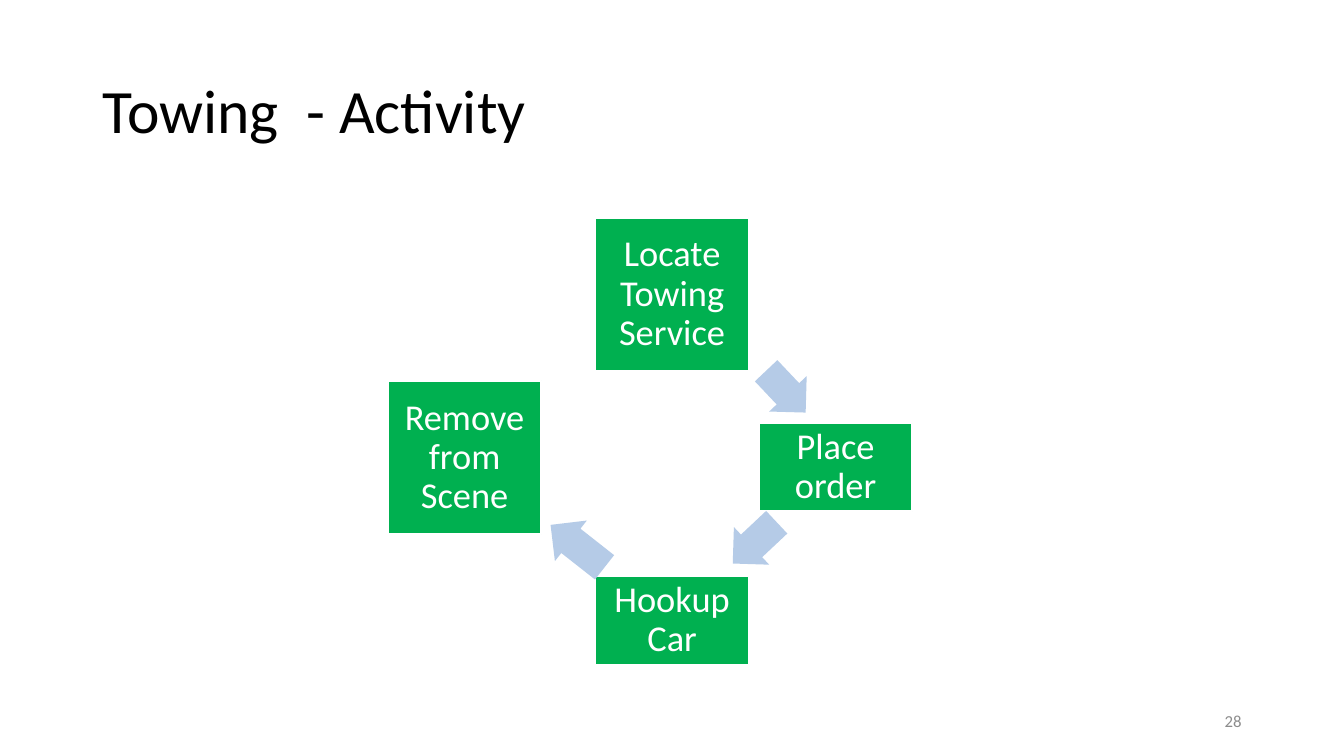
import pptx
import pptx.dml.color
import pptx.enum.shapes
import pptx.enum.text
import pptx.util

Cm = pptx.util.Cm
ALIGN = pptx.enum.text.PP_ALIGN
SHAPE = pptx.enum.shapes.MSO_SHAPE

COLOURS = {
    "title": "000000",
    "step": "00B050",
    "white": "FFFFFF",
    "arrow": "B5CBE7",
    "number": "8C8C8C",
}

STEP_WIDTH = 3.86
STEPS = [
    ("Locate Towing Service", 5.23, 0, 3.86),
    ("Place order", 9.35, 5.18, 2.21),
    ("Hookup Car", 5.23, 9.04, 2.21),
    ("Remove from Scene", 0, 4.11, 3.86),
]
ARROW_HEIGHT = 1.3
ARROWS = [
    (9.3, 3.73, 1.45, 46.6),
    (8.48, 7.54, 1.52, 136.8),
    (3.91, 7.62, 1.73, 218.2),
]


def colour(name):
    """Return the named colour."""
    return pptx.dml.color.RGBColor.from_string(COLOURS[name])


def write_text(shape, text, size, ink, align=ALIGN.LEFT, line_spacing=None, inset=None):
    """Put one formatted paragraph into a shape, centred vertically."""
    frame = shape.text_frame
    frame.word_wrap = True
    frame.auto_size = pptx.enum.text.MSO_AUTO_SIZE.NONE
    frame.vertical_anchor = pptx.enum.text.MSO_ANCHOR.MIDDLE
    if inset is not None:
        frame.margin_left = frame.margin_right = Cm(inset)
        frame.margin_top = frame.margin_bottom = Cm(inset)
    paragraph = frame.paragraphs[0]
    paragraph.alignment = align
    paragraph.line_spacing = line_spacing
    run = paragraph.add_run()
    run.text = text
    run.font.name = "Calibri"
    run.font.size = pptx.util.Pt(size)
    run.font.color.rgb = colour(ink)


def add_filled_shape(slide, kind, left, top, width, height, fill):
    """Add a flat preset shape without an outline."""
    shape = slide.shapes.add_shape(kind, Cm(left), Cm(top), Cm(width), Cm(height))
    shape.shadow.inherit = False
    shape.fill.solid()
    shape.fill.fore_color.rgb = colour(fill)
    shape.line.fill.background()
    return shape


def place_title(slide, left, top, width, height):
    """Move and fill the title placeholder."""
    title = slide.shapes.title
    title.left, title.top, title.width, title.height = map(Cm, (left, top, width, height))
    write_text(title, "Towing  - Activity", 44, "title", line_spacing=0.9)


def draw_cycle(slide, left, top):
    """Draw the towing steps and the arrows that join them."""
    for text, x, y, height in STEPS:
        step = add_filled_shape(
            slide, SHAPE.RECTANGLE, left + x, top + y, STEP_WIDTH, height, "step")
        step.line.color.rgb = colour("white")
        step.line.width = pptx.util.Pt(1)
        write_text(step, text, 26, "white", align=ALIGN.CENTER, line_spacing=0.9, inset=0.1)
    for x, y, width, angle in ARROWS:
        arrow = add_filled_shape(
            slide, SHAPE.RIGHT_ARROW, left + x, top + y, width, ARROW_HEIGHT, "arrow")
        arrow.adjustments[0] = 0.6
        arrow.adjustments[1] = 0.5
        arrow.rotation = angle


def place_number(slide, left, top, width, height):
    """Add the slide number."""
    box = slide.shapes.add_textbox(Cm(left), Cm(top), Cm(width), Cm(height))
    write_text(box, "28", 12, "number", align=ALIGN.RIGHT)


def main():
    """Build and save the presentation."""
    presentation = pptx.Presentation()
    presentation.slide_width = Cm(33.87)
    presentation.slide_height = Cm(19.05)
    slide = presentation.slides.add_slide(presentation.slide_layouts.get_by_name("Title Only"))
    place_title(slide, 2.33, 1.01, 29.21, 3.68)
    draw_cycle(slide, 9.78, 5.49)
    place_number(slide, 23.92, 17.66, 7.62, 1.01)
    presentation.save("out.pptx")


if __name__ == "__main__":
    main()
